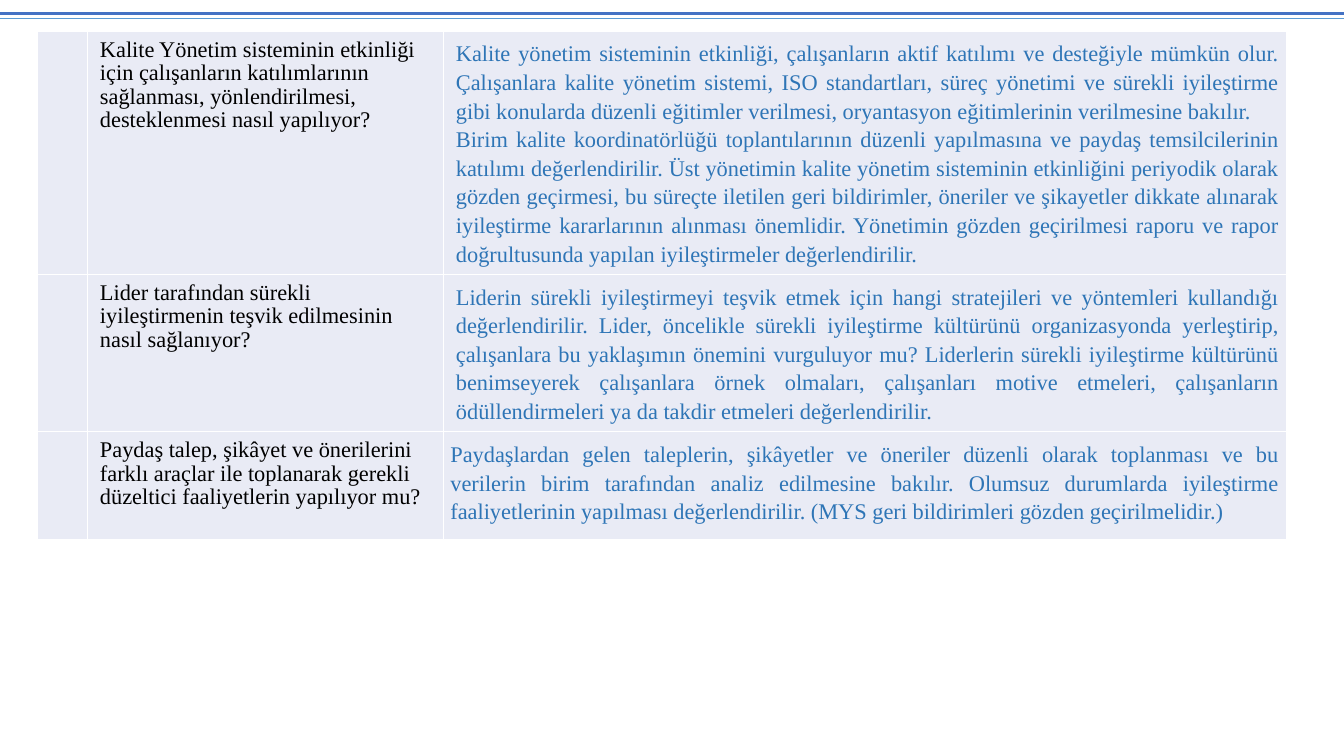
"""Build the quality management question table slide."""
from lxml.etree import SubElement
from pptx import Presentation
from pptx.dml.color import RGBColor
from pptx.enum.shapes import MSO_CONNECTOR
from pptx.enum.text import PP_ALIGN
from pptx.oxml.ns import qn
from pptx.util import Cm, Pt

BLACK = RGBColor(0x00, 0x00, 0x00)
WHITE = RGBColor(0xFF, 0xFF, 0xFF)
ANSWER_BLUE = RGBColor(0x2E, 0x75, 0xB6)
THIN_BLUE = RGBColor(0x5B, 0x9B, 0xD5)
THICK_BLUE = RGBColor(0x44, 0x72, 0xC4)
CELL_FILL = RGBColor(0xE9, 0xEB, 0xF5)

INDENT = Cm(0.14)
COLUMN_WIDTHS = [1.25, 8.97, 21.25]
MARGINS = {f"margin_{side}": Cm(0.18) for side in ("left", "right", "top", "bottom")}
QUESTION = {"line_spacing": 0.95, "alignment": PP_ALIGN.LEFT}
ANSWER = {"line_spacing": 1.15, "alignment": PP_ALIGN.JUSTIFY}
FONT = {"name": "Times New Roman", "size": Pt(16), "bold": False}

ROWS = [
    (6.11, INDENT,
     "Kalite Yönetim sisteminin etkinliği için çalışanların katılımlarının "
     "sağlanması, yönlendirilmesi, desteklenmesi nasıl yapılıyor?",
     ["Kalite yönetim sisteminin etkinliği, çalışanların aktif katılımı ve "
      "desteğiyle mümkün olur. Çalışanlara kalite yönetim sistemi, ISO "
      "standartları, süreç yönetimi ve sürekli iyileştirme gibi konularda "
      "düzenli eğitimler verilmesi, oryantasyon eğitimlerinin verilmesine bakılır.",
      "Birim kalite koordinatörlüğü toplantılarının düzenli yapılmasına ve "
      "paydaş temsilcilerinin katılımı değerlendirilir. Üst yönetimin kalite "
      "yönetim sisteminin etkinliğini periyodik olarak gözden geçirmesi, bu "
      "süreçte iletilen geri bildirimler, öneriler ve şikayetler dikkate "
      "alınarak iyileştirme kararlarının alınması önemlidir. Yönetimin gözden "
      "geçirilmesi raporu ve rapor doğrultusunda yapılan iyileştirmeler "
      "değerlendirilir."]),
    (3.96, INDENT,
     "Lider tarafından sürekli iyileştirmenin teşvik edilmesinin nasıl sağlanıyor?",
     ["Liderin sürekli iyileştirmeyi teşvik etmek için hangi stratejileri ve "
      "yöntemleri kullandığı değerlendirilir. Lider, öncelikle sürekli "
      "iyileştirme kültürünü organizasyonda yerleştirip, çalışanlara bu "
      "yaklaşımın önemini vurguluyor mu? Liderlerin sürekli iyileştirme "
      "kültürünü benimseyerek çalışanlara örnek olmaları, çalışanları motive "
      "etmeleri, çalışanların ödüllendirmeleri ya da takdir etmeleri "
      "değerlendirilir."]),
    (2.73, 0,
     "Paydaş talep, şikâyet ve önerilerini farklı araçlar ile toplanarak "
     "gerekli düzeltici faaliyetlerin yapılıyor mu?",
     ["Paydaşlardan gelen taleplerin, şikâyetler ve öneriler düzenli olarak "
      "toplanması ve bu verilerin birim tarafından analiz edilmesine bakılır. "
      "Olumsuz durumlarda iyileştirme faaliyetlerinin yapılması "
      "değerlendirilir. (MYS geri bildirimleri gözden geçirilmelidir.)"]),
]


def style_cell(cell):
    tc_pr = cell._tc.get_or_add_tcPr()
    for side in ("lnL", "lnR", "lnT", "lnB"):
        ln = SubElement(tc_pr, qn(f"a:{side}"), w=str(Pt(1)))
        fill = SubElement(ln, qn("a:solidFill"))
        SubElement(fill, qn("a:srgbClr"), val=str(WHITE))
    cell.fill.solid()
    cell.fill.fore_color.rgb = CELL_FILL
    for name, value in MARGINS.items():
        setattr(cell, name, value)


def write_cell(cell, texts, layout, color, indent):
    tf = cell.text_frame
    for i, text in enumerate(texts):
        p = tf.add_paragraph() if i else tf.paragraphs[0]
        for name, value in layout.items():
            setattr(p, name, value)
        p._p.get_or_add_pPr().set("marL", str(indent))
        r = p.add_run()
        r.text = text
        for name, value in FONT.items():
            setattr(r.font, name, value)
        r.font.color.rgb = color


prs = Presentation()
prs.slide_width, prs.slide_height = Cm(33.87), Cm(19.05)
s = prs.slides.add_slide(prs.slide_layouts[6])

for y, color, width in [(0.46, THIN_BLUE, 1), (0.33, THICK_BLUE, 2.25)]:
    rule = s.shapes.add_connector(
        MSO_CONNECTOR.STRAIGHT, 0, Cm(y), prs.slide_width, Cm(y))
    rule.line.color.rgb = color
    rule.line.width = Pt(width)
    SubElement(rule._element.spPr, qn("a:effectLst"))

table = s.shapes.add_table(
    len(ROWS), len(COLUMN_WIDTHS), Cm(0.95), Cm(0.78),
    Cm(sum(COLUMN_WIDTHS)), Cm(sum(row[0] for row in ROWS))).table
table.first_row = table.horz_banding = False
for column, width in zip(table.columns, COLUMN_WIDTHS):
    column.width = Cm(width)

for row, (height, answer_indent, question, answers) in zip(table.rows, ROWS):
    row.height = Cm(height)
    for cell in row.cells:
        style_cell(cell)
    write_cell(row.cells[1], [question], QUESTION, BLACK, INDENT)
    write_cell(row.cells[2], answers, ANSWER, ANSWER_BLUE, answer_indent)

prs.save("out.pptx")
